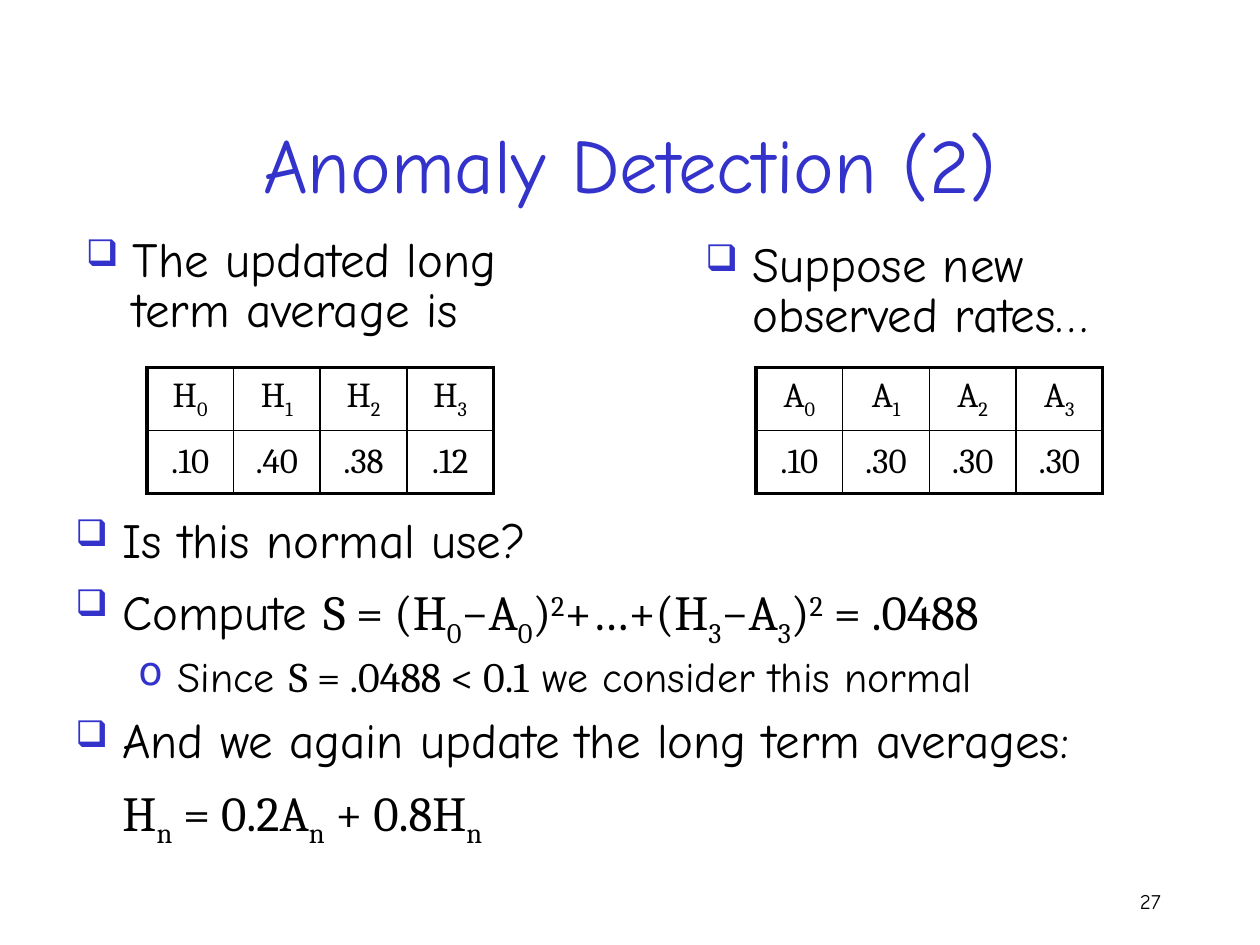
from lxml.etree import SubElement
from pptx import Presentation
from pptx.dml.color import RGBColor
from pptx.enum.text import MSO_ANCHOR, PP_ALIGN
from pptx.oxml.ns import qn
from pptx.util import Cm, Pt

COLORS = {"accent": "3333CC", "ink": "000000"}
HAND, MATH = "Comic Neue", "Cambria"
BASELINES = {"_": "-25000", "^": "30000"}


def write(paragraph, segments, size, color="ink", **formats):
    for name, value in formats.items():
        setattr(paragraph, name, value)
    for face, marked in segments:
        for piece in marked.split("|"):
            run = paragraph.add_run()
            run.text = piece.lstrip("_^")
            run.font.name = face
            run.font.size = Pt(size)
            run.font.color.rgb = RGBColor.from_string(COLORS[color])
            if piece[0] in BASELINES:
                run.font._element.set("baseline", BASELINES[piece[0]])


def set_bullet(paragraph, margin, hanging, char=None, percent=75):
    properties = paragraph._p.get_or_add_pPr()
    properties.set("marL", str(Cm(margin)))
    properties.set("indent", str(-Cm(hanging)))
    if char:
        bullet_color = SubElement(properties, qn("a:buClr"))
        SubElement(bullet_color, qn("a:srgbClr"), val=COLORS["accent"])
        SubElement(properties, qn("a:buSzPct"), val=str(percent * 1000))
        SubElement(properties, qn("a:buChar"), char=char)
    else:
        SubElement(properties, qn("a:buNone"))


presentation = Presentation()
presentation.slide_width, presentation.slide_height = Cm(25.4), Cm(19.05)
slide = presentation.slides.add_slide(presentation.slide_layouts[5])

title = slide.shapes.title
placement = {"left": 1.9, "top": 1.7, "width": 21.6, "height": 3.17}
for side, length in placement.items():
    setattr(title, side, Cm(length))
title.text_frame.vertical_anchor = MSO_ANCHOR.MIDDLE
write(title.text_frame.paragraphs[0], [(HAND, "Anomaly Detection (2)")], 44,
      "accent", alignment=PP_ALIGN.CENTER)

SQUARE = (0.95, 0.95, "❑")
CIRCLE = (2.06, 0.79, "o", 95)
PLAIN = (0.95, 0)
updated = [(SQUARE, 28, [(HAND, "The updated long term average is")])]
observed = [(SQUARE, 28, [(HAND, "Suppose new observed rates…")])]
steps = [
    (SQUARE, 28, [(HAND, "Is this normal use?")]),
    (SQUARE, 28, [(HAND, "Compute "),
                  (MATH, "S = (H|_0|−A|_0|)|^2|+…+(H|_3|−A|_3|)|^2| = .0488")]),
    (CIRCLE, 24, [(HAND, "Since "), (MATH, "S = .0488 < 0.1"),
                  (HAND, " we consider this normal")]),
    (SQUARE, 28, [(HAND, "And we again update the long term averages:")]),
    (PLAIN, 28, [(MATH, "H|_n| = 0.2A|_n| + 0.8H|_n")]),
]
text_blocks = [
    ((1.48, 4.66, 9.74, 2.75), updated, 0.85, 0),
    ((1.27, 10.37, 23.07, 6.56), steps, 0.8, 6),
    ((13.97, 4.76, 9.53, 2.46), observed, 0.85, 0),
]
for box, lines, line_spacing, after in text_blocks:
    frame = slide.shapes.add_textbox(*map(Cm, box)).text_frame
    frame.word_wrap = True
    for index, (bullet, size, segments) in enumerate(lines):
        paragraph = frame.add_paragraph() if index else frame.paragraphs[0]
        write(paragraph, segments, size, line_spacing=line_spacing,
              space_before=Pt(size * 0.2), space_after=Pt(after))
        set_bullet(paragraph, *bullet)

rate_tables = [
    (2.96, "H", [".10", ".40", ".38", ".12"]),
    (15.24, "A", [".10", ".30", ".30", ".30"]),
]
for left, letter, rates in rate_tables:
    headings = [f"{letter}|_{n}" for n in range(len(rates))]
    rows = [headings, rates]
    table = slide.shapes.add_table(len(rows), len(rates), Cm(left), Cm(7.41),
                                   Cm(6.99), Cm(2.54)).table
    table.first_row = table.horz_banding = False
    for r, row in enumerate(rows):
        for c, content in enumerate(row):
            cell = table.cell(r, c)
            cell.vertical_anchor = MSO_ANCHOR.MIDDLE
            write(cell.text_frame.paragraphs[0], [(MATH, content)], 20,
                  alignment=PP_ALIGN.CENTER, space_before=Pt(4))
            outer_edges = {"a:lnL": c == 0, "a:lnR": c == len(row) - 1,
                           "a:lnT": r == 0, "a:lnB": r == len(rows) - 1}
            for tag, is_outer in outer_edges.items():
                border = SubElement(cell._tc.get_or_add_tcPr(), qn(tag),
                                    w=str(Pt(2.25 if is_outer else 1)))
                border_fill = SubElement(border, qn("a:solidFill"))
                SubElement(border_fill, qn("a:srgbClr"), val=COLORS["ink"])
            cell.fill.background()

page_number = slide.shapes.add_textbox(Cm(17.93), Cm(17.65), Cm(5.72), Cm(1.02)).text_frame
page_number.word_wrap = True
page_number.vertical_anchor = MSO_ANCHOR.MIDDLE
write(page_number.paragraphs[0], [(HAND, "27")], 12, alignment=PP_ALIGN.RIGHT)

presentation.save("out.pptx")
